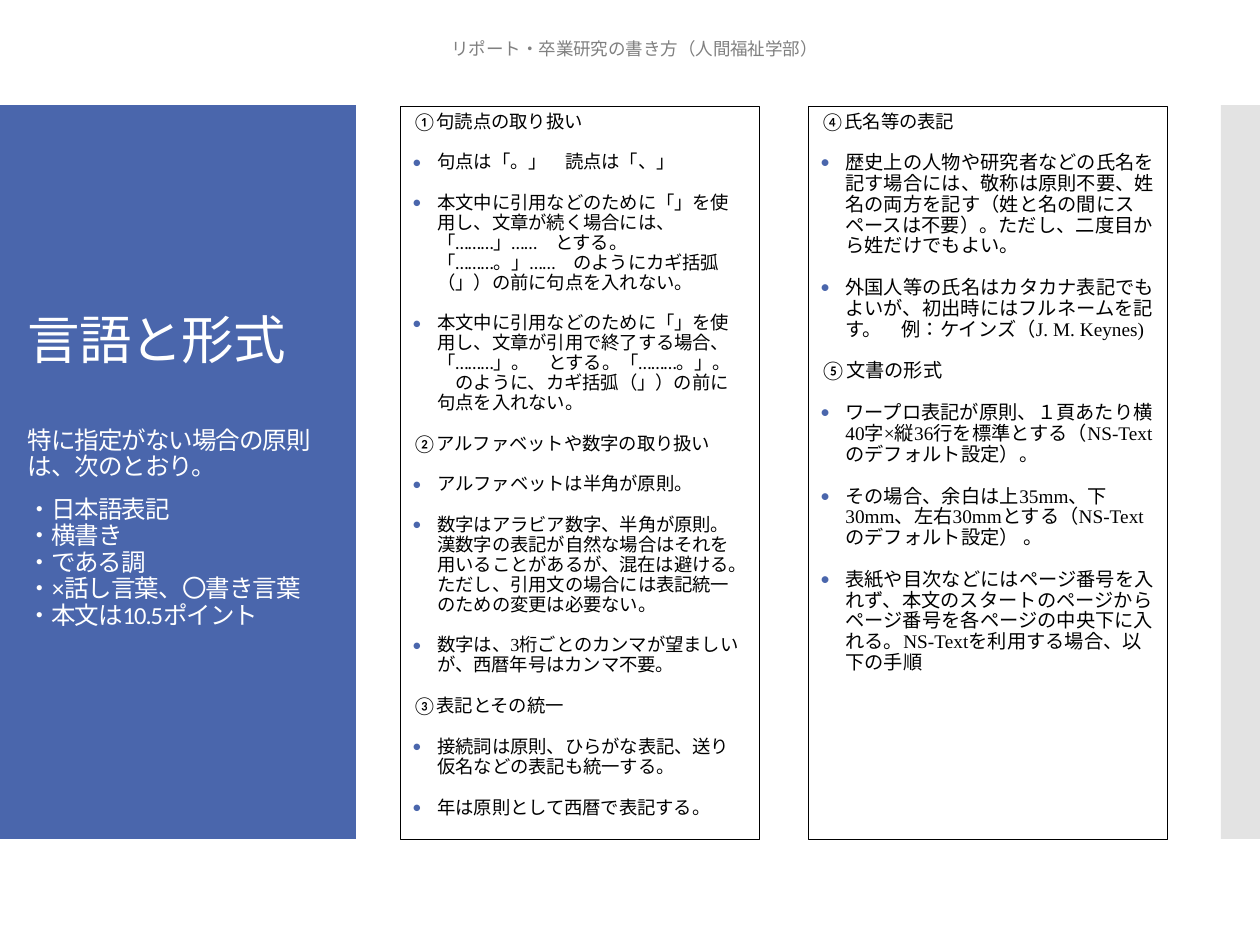
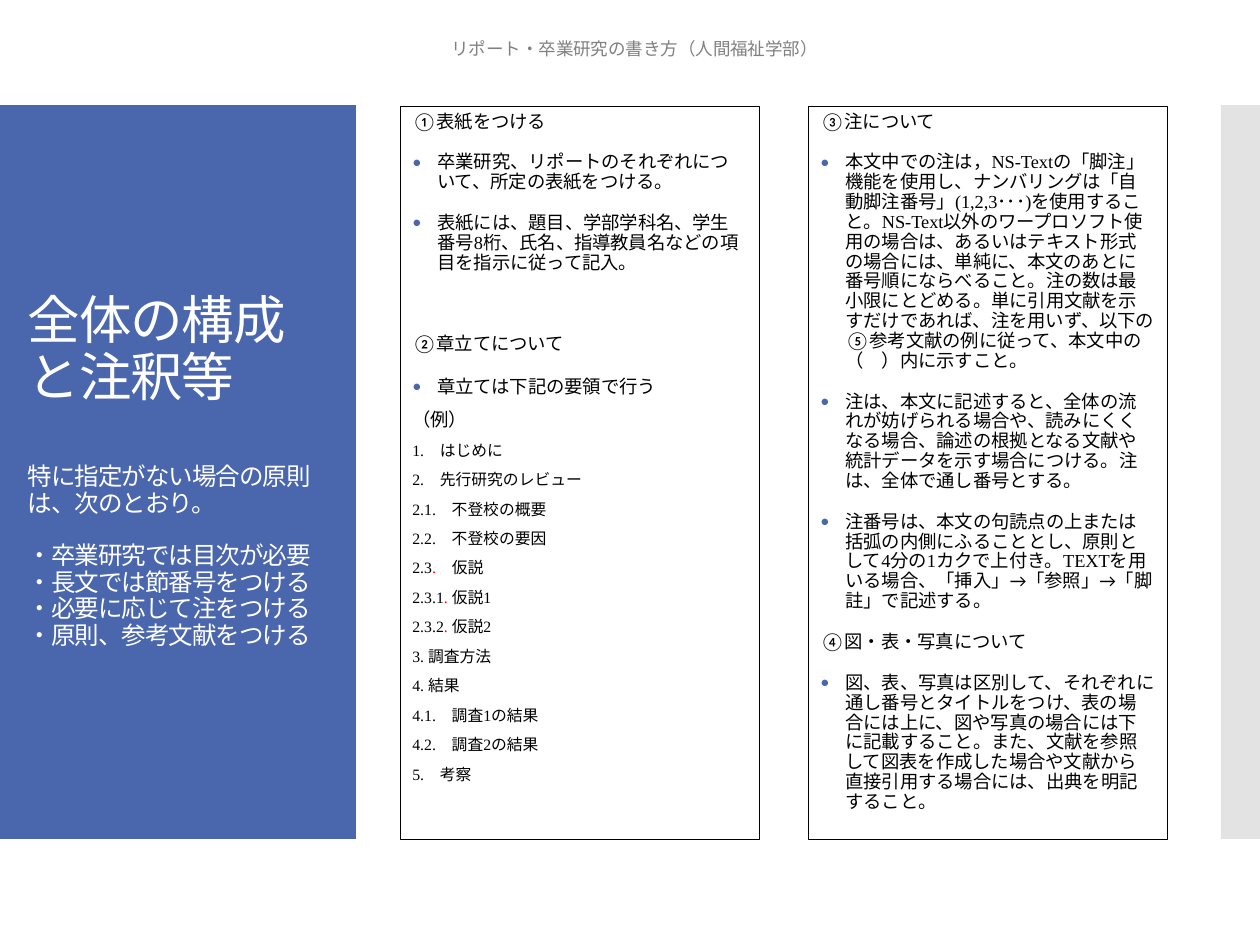
from dataclasses import dataclass

from lxml.etree import SubElement
from pptx import Presentation
from pptx.dml.color import RGBColor
from pptx.enum.shapes import MSO_SHAPE
from pptx.enum.text import MSO_ANCHOR, MSO_AUTO_SIZE, PP_ALIGN
from pptx.oxml.ns import qn
from pptx.util import Emu, Pt

PX = 914400 / 126


@dataclass(frozen=True)
class Theme:
    blue: str = "4A66AC"
    grey_bar: str = "C8C8C8"
    header_grey: str = "808080"
    white: str = "FFFFFF"
    black: str = "000000"
    red: str = "FF0000"
    sans: str = "Calibri"
    gothic: str = "Noto Sans CJK JP"
    serif: str = "Times New Roman"
    title: float = 30
    summary: float = 14
    body: float = 10.5
    body_large: float = 11
    outline: float = 9
    header: float = 10
    indent: int = 25
    line_spacing: float = 0.9


THEME = Theme()
HEADER_TEXT = "リポート・卒業研究の書き方（人間福祉学部）"

# Regions: left, top, width, height in px
BLUE_PANEL = (0, 105, 356, 734)
GREY_BAR = (1221, 105, 40, 734)
TITLE_BOX = (15, 155, 315, 634)
HEADER_BOX = (329, 24, 611, 50)
COLUMN_BOXES = [(400 + 408 * index, 106, 359, 733) for index in range(2)]


def px(length):
    return Emu(round(length * PX))


def place(shape, box):
    shape.left, shape.top, shape.width, shape.height = map(px, box)


def color(value):
    return RGBColor.from_string(value)


def add_run(paragraph, text, size, font, fill, tracking):
    run = paragraph.add_run()
    run.text = text
    run.font.size = Pt(size)
    run.font.name = font
    run.font.color.rgb = color(fill)
    properties = run.font._element
    properties.set("lang", "ja-JP")
    SubElement(properties, qn("a:ea")).set("typeface", THEME.sans)
    if tracking:
        properties.set("spc", str(tracking))


def add_bullet(paragraph):
    properties = paragraph._p.get_or_add_pPr()
    properties.set("marL", str(px(THEME.indent)))
    properties.set("indent", str(-px(THEME.indent)))
    bullet_color = SubElement(properties, qn("a:buClr"))
    SubElement(bullet_color, qn("a:srgbClr")).set("val", THEME.blue)
    SubElement(properties, qn("a:buFont")).set("typeface", THEME.sans)
    SubElement(properties, qn("a:buChar")).set("char", "•")


def add_text(frame, text, size=THEME.body, font=THEME.gothic, fill=THEME.black,
             before=0, spacing=THEME.line_spacing, align=PP_ALIGN.LEFT,
             bullet=False, tracking=0):
    """Add a paragraph; text is a string or a list of (string, overrides)."""
    paragraph = frame.paragraphs[0]
    if paragraph.runs:
        paragraph = frame.add_paragraph()
    paragraph.alignment = align
    paragraph.line_spacing = spacing
    paragraph.space_before = Pt(before)
    if bullet:
        add_bullet(paragraph)
    base = dict(size=size, font=font, fill=fill, tracking=tracking)
    for part, overrides in [(text, {})] if isinstance(text, str) else text:
        add_run(paragraph, part, **{**base, **overrides})


def prepare_frame(shape, anchor):
    frame = shape.text_frame
    frame.word_wrap = True
    frame.auto_size = MSO_AUTO_SIZE.NONE
    frame.vertical_anchor = anchor
    return frame


def add_rectangle(slide, box, fill=None, line=None, opacity=None):
    shape = slide.shapes.add_shape(MSO_SHAPE.RECTANGLE, *map(px, box))
    shape.shadow.inherit = False
    if fill:
        shape.fill.solid()
        shape.fill.fore_color.rgb = color(fill)
    else:
        shape.fill.background()
    if line:
        shape.line.color.rgb = color(line)
        shape.line.width = Pt(0.25)
    else:
        shape.line.fill.background()
    if opacity:
        solid = shape.fill._xPr.find(qn("a:solidFill"))
        SubElement(solid[0], qn("a:alpha")).set("val", str(opacity * 1000))
    return shape


def add_bands(slide):
    add_rectangle(slide, BLUE_PANEL, fill=THEME.blue)
    add_rectangle(slide, GREY_BAR, fill=THEME.grey_bar, opacity=50)


def add_title(slide, box, title, points, points_gap):
    shape = slide.shapes.title
    shape.element.getparent().append(shape.element)  # in front of the panel
    place(shape, box)
    frame = prepare_frame(shape, MSO_ANCHOR.MIDDLE)
    style = dict(font=THEME.sans, fill=THEME.white, tracking=-60)
    add_text(frame, title, size=THEME.title, **style)
    add_text(frame, "特に指定がない場合の原則は、次のとおり。",
             size=THEME.summary, before=32.5, **style)
    for index, point in enumerate(points):
        add_text(frame, "・" + point, size=THEME.summary,
                 before=0 if index else points_gap, **style)


def add_column(slide, box, entries):
    shape = add_rectangle(slide, box, line=THEME.black)
    frame = prepare_frame(shape, MSO_ANCHOR.TOP)
    for index, (text, style) in enumerate(entries):
        add_text(frame, text, **{"before": 12 if index else 0, **style})


def add_header(slide, box):
    shape = slide.shapes.add_textbox(*map(px, box))
    frame = prepare_frame(shape, MSO_ANCHOR.MIDDLE)
    add_text(frame, HEADER_TEXT, size=THEME.header, font=THEME.sans,
             fill=THEME.header_grey, spacing=1.0, align=PP_ALIGN.CENTER)


def build_slide(presentation, title, points, points_gap, columns):
    slide = presentation.slides.add_slide(presentation.slide_layouts[5])
    add_bands(slide)
    add_title(slide, TITLE_BOX, title, points, points_gap)
    for box, entries in zip(COLUMN_BOXES, columns):
        add_column(slide, box, entries)
    add_header(slide, HEADER_BOX)


# Kinds of column entry
def heading(text, **style):
    return text, style


def bullets(*texts, **style):
    return [(text, {"bullet": True, **style}) for text in texts]


def outline(*texts):
    style = dict(size=THEME.outline, font=THEME.serif, before=6, spacing=1.0)
    return [(text, style) for text in texts]


SERIF = dict(font=THEME.serif)
LARGE_SERIF = dict(font=THEME.serif, size=THEME.body_large)
GOTHIC = dict(font=THEME.gothic)
RED = dict(fill=THEME.red)

LANGUAGE_COLUMNS = [
    [
        heading("①句読点の取り扱い"),
        *bullets(
            "句点は「。」　読点は「、」",
            "本文中に引用などのために「」を使用し、文章が続く場合には、 "
            "「………」……　とする。 「………。」……　のようにカギ括弧（」）の前に句点を入れない。",
            "本文中に引用などのために「」を使用し、文章が引用で終了する場合、"
            "「………」。　とする。「………。」。　のように、カギ括弧（」）の前に句点を入れない。"),
        heading("②アルファベットや数字の取り扱い"),
        *bullets(
            "アルファベットは半角が原則。",
            "数字はアラビア数字、半角が原則。漢数字の表記が自然な場合はそれを用いることがあるが、"
            "混在は避ける。ただし、引用文の場合には表記統一のための変更は必要ない。",
            [("数字は", {}), ("、3桁ごとの", SERIF),
             ("カンマが望ましいが、西暦年号はカンマ不要。", {})]),
        heading("③表記とその統一"),
        *bullets("接続詞は原則、ひらがな表記、送り仮名などの表記も統一する。",
                 "年は原則として西暦で表記する。"),
    ],
    [
        heading("④氏名等の表記"),
        *bullets(
            "歴史上の人物や研究者などの氏名を記す場合には、敬称は原則不要、姓名の両方を記す"
            "（姓と名の間にスペースは不要）。ただし、二度目から姓だけでもよい。",
            "外国人等の氏名はカタカナ表記でもよいが、初出時にはフルネームを記す。"
            "　例：ケインズ（J. M. Keynes)", **LARGE_SERIF),
        heading("⑤文書の形式", **LARGE_SERIF),
        *bullets(
            "ワープロ表記が原則、１頁あたり横40字×縦36行を標準とする（NS-Textのデフォルト設定）。",
            "その場合、余白は上35mm、下30mm、左右30mmとする（NS-Textのデフォルト設定） 。",
            [("表紙や目次などにはページ番号を入れず、本文のスタートのページから", GOTHIC),
             ("ページ番号を各ページの中央下に入れる。NS-Textを利用する場合、以下の手順", {})],
            **LARGE_SERIF),
    ],
]

STRUCTURE_COLUMNS = [
    [
        heading("①表紙をつける"),
        *bullets(
            "卒業研究、リポートのそれぞれについて、所定の表紙をつける。",
            [("表紙には、題目、学部学科名、学生番号", {}), ("8", SERIF),
             ("桁、氏名、指導教員名などの項目を指示に従って記入。", {})]),
        heading("②章立てについて", before=35),
        *bullets("章立ては下記の要領で行う", spacing=1.0),
        heading("（例）", before=6, spacing=1.0),
        *outline(
            "1.　はじめに",
            "2.　先行研究のレビュー",
            "2.1.　不登校の概要",
            "2.2.　不登校の要因",
            [("2.3", {}), (".　", RED), ("仮説", {})],
            *[[(f"2.3.{number}", {}), (". ", RED), (f"仮説{number}", {})]
              for number in (1, 2)],
            "3. 調査方法",
            "4. 結果",
            "4.1.　調査1の結果",
            "4.2.　調査2の結果",
            "5.　考察"),
    ],
    [
        heading("③注について"),
        *bullets(
            "本文中での注は，NS-Textの「脚注」機能を使用し、ナンバリングは「自動脚注番号」"
            "(1,2,3･･･)を使用すること。NS-Text以外のワープロソフト使用の場合は、"
            "あるいはテキスト形式の場合には、単純に、本文のあとに番号順にならべること。"
            "注の数は最小限にとどめる。単に引用文献を示すだけであれば、注を用いず、"
            "以下の⑤参考文献の例に従って、本文中の（　）内に示すこと。",
            "注は、本文に記述すると、全体の流れが妨げられる場合や、読みにくくなる場合、"
            "論述の根拠となる文献や統計データを示す場合につける。注は、全体で通し番号とする。",
            "注番号は、本文の句読点の上または括弧の内側にふることとし、原則として4分の1カクで上付き。"
            "TEXTを用いる場合、「挿入」→「参照」→「脚註」で記述する。", **SERIF),
        heading("④図・表・写真について", **SERIF),
        *bullets(
            "図、表、写真は区別して、それぞれに通し番号とタイトルをつけ、表の場合には上に、"
            "図や写真の場合には下に記載すること。また、文献を参照して図表を作成した場合や"
            "文献から直接引用する場合には、出典を明記すること。", **SERIF),
    ],
]


def main():
    presentation = Presentation()
    presentation.slide_width, presentation.slide_height = px(1260), px(945)
    build_slide(
        presentation, "言語と形式",
        ["日本語表記", "横書き", "である調", "×話し言葉、〇書き言葉", "本文は10.5ポイント"],
        9, LANGUAGE_COLUMNS)
    build_slide(
        presentation, "全体の構成と注釈等",
        ["卒業研究では目次が必要", "長文では節番号をつける",
         "必要に応じて注をつける", "原則、参考文献をつける"],
        15, STRUCTURE_COLUMNS)
    presentation.save("out.pptx")


if __name__ == "__main__":
    main()
